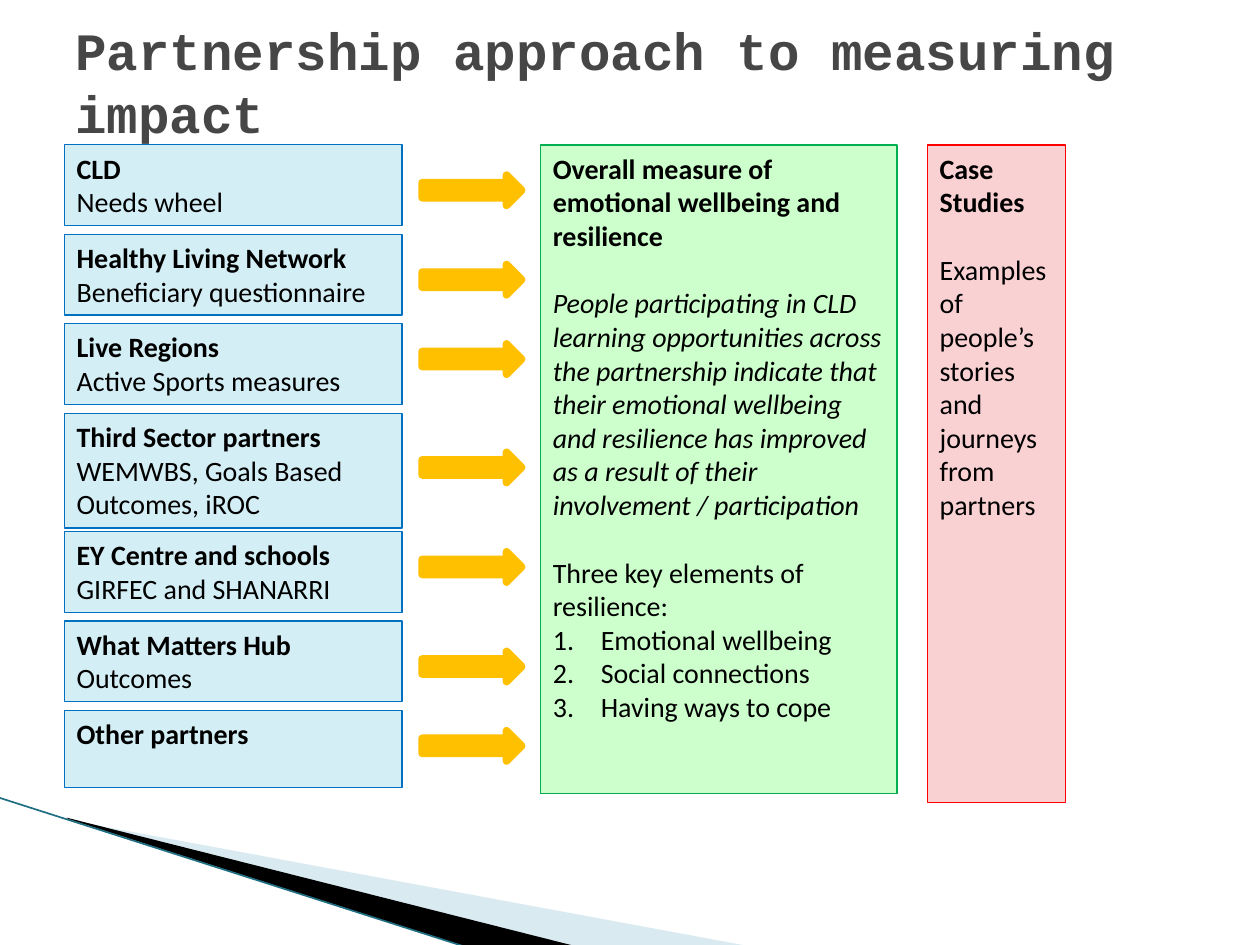
from lxml import etree
from pptx import Presentation, util as u
from pptx.dml.color import RGBColor
from pptx.enum import shapes, text
from pptx.oxml import ns

THEME = {
    "title_font": "Courier New", "title_size": 30, "title": "464646",
    "font": "Calibri", "size": 16, "line_gap": 19.5, "ink": "000000",
    "partner": ("D3EEF5", "0070C0"), "measure": ("CCFFCC", "00B050"),
    "cases": ("F9D1D3", "FF0000"), "arrow": "FFC000",
    "swoosh": "A0CBDC", "swoosh_line": "1F6E82",
}

TITLE = "Partnership approach to measuring impact"

# name, measure, box top, box height, arrow top
PARTNERS = [
    ("CLD", "Needs wheel", 1.15, 0.64, 1.39),
    ("Healthy Living Network", "Beneficiary questionnaire", 1.86, 0.64, 2.1),
    ("Live Regions", "Active Sports measures", 2.57, 0.64, 2.73),
    ("Third Sector partners", "WEMWBS, Goals Based Outcomes, iROC", 3.28, 0.91, 3.59),
    ("EY Centre and schools", "GIRFEC and SHANARRI", 4.22, 0.64, 4.38),
    ("What Matters Hub", "Outcomes", 4.93, 0.64, 5.17),
    ("Other partners", "", 5.64, 0.61, 5.8),
]

# text, style, whether a line's gap comes before it
MEASURE = [
    ("Overall measure of emotional wellbeing and resilience", "bold", False),
    ("People participating in CLD learning opportunities across the partnership "
     "indicate that their emotional wellbeing and resilience has improved as a "
     "result of their involvement / participation", "italic", True),
    ("Three key elements of resilience:", "plain", True),
    ("Emotional wellbeing", "number", False),
    ("Social connections", "number", False),
    ("Having ways to cope", "number", False),
]
CASES = [
    ("Case Studies", "bold", False),
    ("Examples of people’s stories and journeys from partners", "plain", True),
]

# points, colour, opacity in percent
SWOOSHES = [
    ([(0.55, 6.51), (5.95, 7.51), (4.56, 7.51), (0.55, 6.5)], THEME["swoosh"], 40),
    ([(0.53, 6.49), (4.57, 7.51), (3.72, 7.52), (0.54, 6.5)], THEME["ink"], 100),
]


def rgb(name):
    return RGBColor.from_string(name)


def inches(*values):
    return [u.Inches(v) for v in values]


def add_run(p, words, font, size, color, bold=False, italic=False):
    r = p.add_run()
    r.text = words
    r.font.name, r.font.size = font, u.Pt(size)
    r.font.color.rgb = rgb(color)
    r.font.bold, r.font.italic = bold, italic


def number(p):
    pPr = p._p.get_or_add_pPr()
    pPr.set("marL", str(u.Inches(0.38)))
    pPr.set("indent", str(-u.Inches(0.38)))
    etree.SubElement(pPr, ns.qn("a:buFont"), typeface="+mj-lt")
    etree.SubElement(pPr, ns.qn("a:buAutoNum"), type="arabicPeriod")


def add_shape(s, kind, box, fill, line, width):
    sp = s.shapes.add_shape(kind, *inches(*box))
    sp.shadow.inherit = False
    sp.fill.solid()
    sp.fill.fore_color.rgb = rgb(fill)
    sp.line.color.rgb = rgb(line)
    sp.line.width = u.Pt(width)
    return sp


def add_panel(s, box, colors, paragraphs):
    sp = add_shape(s, shapes.MSO_SHAPE.RECTANGLE, box, *colors, 0.75)
    tf = sp.text_frame
    tf.word_wrap = True
    tf.vertical_anchor = text.MSO_ANCHOR.TOP
    for i, (words, style, gap) in enumerate(paragraphs):
        p = tf.add_paragraph() if i else tf.paragraphs[0]
        p.alignment = text.PP_ALIGN.LEFT
        if gap:
            p.space_before = u.Pt(THEME["line_gap"])
        if style == "number":
            number(p)
        add_run(p, words, THEME["font"], THEME["size"], THEME["ink"],
                style == "bold", style == "italic")


def add_arrow(s, top):
    sp = add_shape(s, shapes.MSO_SHAPE.RIGHT_ARROW, (3.35, top, 0.79, 0.24),
                   THEME["arrow"], THEME["arrow"], 4.33)
    etree.SubElement(sp.line._get_or_add_ln(), ns.qn("a:round"))


def add_swooshes(s):
    for points, color, opacity in SWOOSHES:
        start, *rest = [inches(*point) for point in points]
        builder = s.shapes.build_freeform(*start)
        builder.add_line_segments(rest, close=True)
        sp = builder.convert_to_shape()
        sp.shadow.inherit = False
        sp.fill.solid()
        sp.fill.fore_color.rgb = rgb(color)
        sp.line.fill.background()
        if opacity < 100:
            clr = sp.fill._xPr.find(".//" + ns.qn("a:srgbClr"))
            etree.SubElement(clr, ns.qn("a:alpha"), val=str(opacity * 1000))
    line = s.shapes.add_connector(shapes.MSO_CONNECTOR.STRAIGHT,
                                  *inches(-0.01, 6.33, 3.71, 7.52))
    line.line.color.rgb = rgb(THEME["swoosh_line"])
    line.line.width = u.Pt(0.95)
    etree.SubElement(line._element.spPr, ns.qn("a:effectLst"))


def add_title(s):
    tf = s.shapes.add_textbox(*inches(0.5, 0.3, 9, 0.69)).text_frame
    tf.word_wrap = True
    tf.vertical_anchor = text.MSO_ANCHOR.MIDDLE
    add_run(tf.paragraphs[0], TITLE, THEME["title_font"], THEME["title_size"],
            THEME["title"], bold=True)


def main():
    prs = Presentation()
    prs.slide_width, prs.slide_height = inches(10, 7.5)
    s = prs.slides.add_slide(prs.slide_layouts[6])
    add_swooshes(s)
    add_panel(s, (7.36, 1.15, 1.1, 5.22), THEME["cases"], CASES)
    add_title(s)
    for name, measure, top, height, _ in PARTNERS:
        lines = [(name, "bold", False)]
        if measure:
            lines.append((measure, "plain", False))
        add_panel(s, (0.51, top, 2.68, height), THEME["partner"], lines)
    add_panel(s, (4.29, 1.15, 2.83, 5.15), THEME["measure"], MEASURE)
    for *_, arrow_top in PARTNERS:
        add_arrow(s, arrow_top)
    prs.save("out.pptx")


if __name__ == "__main__":
    main()
